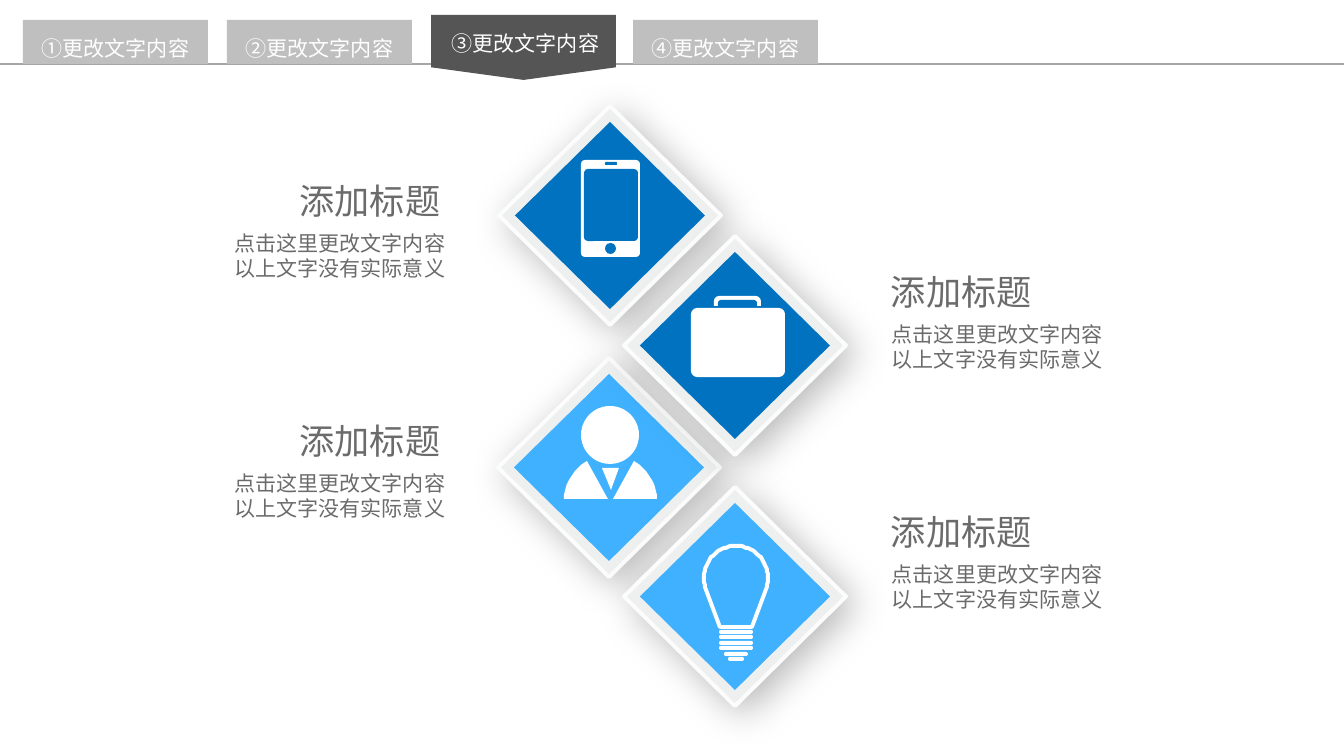
from math import cos, radians, sin

from lxml.etree import SubElement
from pptx import Presentation
from pptx.dml.color import RGBColor
from pptx.enum.shapes import MSO_CONNECTOR, MSO_SHAPE
from pptx.enum.text import MSO_ANCHOR, MSO_AUTO_SIZE, PP_ALIGN
from pptx.oxml.ns import qn
from pptx.util import Pt

PX = 7234
FONT = "Noto Sans CJK SC"
WHITE = RGBColor(0xFF, 0xFF, 0xFF)
DEEP_BLUE = RGBColor(0x00, 0x72, 0xBF)
SKY_BLUE = RGBColor(0x3F, 0xB1, 0xFF)
FRAME = RGBColor(0xEE, 0xF0, 0xF0)
FRAME_EDGE = RGBColor(0xFC, 0xFC, 0xFC)
TEXT_GREY = RGBColor(0x6B, 0x6B, 0x6B)
TAB_GREY = RGBColor(0xBF, 0xBF, 0xBF)
TAB_DARK = RGBColor(0x55, 0x55, 0x55)
RULE_GREY = RGBColor(0xA6, 0xA6, 0xA6)


def paint(shape, fill=None, line=None, width=0):
    shape.shadow.inherit = False
    if fill is None:
        shape.fill.background()
    else:
        shape.fill.solid()
        shape.fill.fore_color.rgb = fill
    if line is None:
        shape.line.fill.background()
    else:
        shape.line.color.rgb = line
        shape.line.width = Pt(width)
        SubElement(shape.line._get_or_add_ln(), qn("a:round"))
    return shape


def add_preset(slide, kind, box, fill, radius=None, **outline):
    shape = slide.shapes.add_shape(kind, *(v * PX for v in box))
    if radius is not None:
        shape.adjustments[0] = radius / min(box[2:])
    return paint(shape, fill, **outline)


def add_outline(slide, origin, points, fill=None, **outline):
    corners = [(origin[0] + x, origin[1] + y) for x, y in points]
    builder = slide.shapes.build_freeform(*corners[0], scale=PX)
    builder.add_line_segments(corners[1:], close=True)
    return paint(builder.convert_to_shape(), fill, **outline)


def write_text(holder, text, size=12, color=TEXT_GREY, align=PP_ALIGN.LEFT,
               leading=14.5, insets=(0, 0), wrap=True):
    frame = holder.text_frame
    frame.text = text
    frame.word_wrap = wrap
    frame.auto_size = MSO_AUTO_SIZE.NONE
    frame.vertical_anchor = MSO_ANCHOR.TOP
    frame.margin_left = frame.margin_right = insets[0] * PX
    frame.margin_top = frame.margin_bottom = insets[1] * PX
    for paragraph in frame.paragraphs:
        paragraph.alignment = align
        paragraph.line_spacing = Pt(leading)
        paragraph.space_before = Pt(0)
        for run in paragraph.runs:
            run.font.size = Pt(size)
            run.font.name = FONT
            run.font.color.rgb = color
            east_asian = SubElement(run.font._element, qn("a:ea"))
            east_asian.set("typeface", FONT)


def add_text(slide, box, text, **style):
    write_text(slide.shapes.add_textbox(*(v * PX for v in box)), text, **style)


def cast_shadow(shape):
    effects = shape._element.spPr.find(qn("a:effectLst"))
    shadow = SubElement(effects, qn("a:outerShdw"), blurRad=str(Pt(22)),
                        dist=str(Pt(6)), dir="2700000", algn="tl", rotWithShape="0")
    black = SubElement(shadow, qn("a:srgbClr"), val="000000")
    SubElement(black, qn("a:alpha"), val="28000")


def add_tabs(slide, box):
    left, top, width, height = box
    tab_width, baseline = 185, top + height
    rule = slide.shapes.add_connector(
        MSO_CONNECTOR.STRAIGHT, 0, baseline * PX, width * PX, baseline * PX)
    rule.line.color.rgb = RULE_GREY
    rule.line.width = Pt(0.75)
    SubElement(rule._element.spPr, qn("a:effectLst"))
    style = dict(color=WHITE, align=PP_ALIGN.CENTER, leading=17.5)
    for x, label in ((23, "①更改文字内容"), (227, "②更改文字内容"), (633, "④更改文字内容")):
        add_preset(slide, MSO_SHAPE.RECTANGLE, (left + x, top, tab_width, height), TAB_GREY)
        add_text(slide, (left + x, top + 10, tab_width, 34), label, **style)

    active_left, active_height = left + 431, 65
    shift = (tab_width - active_height) // 2
    active_tab = add_preset(
        slide, MSO_SHAPE.PENTAGON,
        (active_left + shift, top - 5 - shift, active_height, tab_width), TAB_DARK, radius=12.6)
    active_tab.rotation = 90
    title = slide.shapes.title
    title.left, title.top = (active_left + 2) * PX, (top + 5) * PX
    title.width, title.height = tab_width * PX, 34 * PX
    write_text(title, "③更改文字内容", **style)
    title.element.getparent().append(title.element)


def draw_phone(slide, cx, cy, color):
    for x, y, w, h, radius, fill in ((-29, -55, 59, 97, 4, WHITE),
                                     (-26, -46, 54, 72, 4, color),
                                     (-5, -53, 12, 3, 1, color)):
        add_preset(slide, MSO_SHAPE.ROUNDED_RECTANGLE, (cx + x, cy + y, w, h), fill, radius)
    add_preset(slide, MSO_SHAPE.OVAL, (cx - 5, cy + 28, 11, 11), color)


def draw_briefcase(slide, cx, cy, color):
    handle = MSO_SHAPE.ROUND_2_SAME_RECTANGLE
    add_preset(slide, handle, (cx - 21, cy - 49, 47, 10), WHITE, 5)
    add_preset(slide, handle, (cx - 17, cy - 45, 39, 6), color, 3)
    add_preset(slide, MSO_SHAPE.ROUNDED_RECTANGLE, (cx - 44, cy - 37, 94, 69), WHITE, 6)


def draw_person(slide, cx, cy, color):
    def arm(t):
        weights = ((1 - t) ** 3, 3 * t * (1 - t) ** 2, 3 * t * t * (1 - t), t ** 3)
        controls = ((-22, -6), (-36, 2), (-44, 16), (-45, 32))
        return tuple(sum(w * p[axis] for w, p in zip(weights, controls)) for axis in (0, 1))

    shoulder = [arm(step / 12) for step in range(13)] + [(-1, 32)]
    add_outline(slide, (cx, cy), shoulder, WHITE)
    add_outline(slide, (cx, cy), [(3 - x, y) for x, y in shoulder], WHITE)
    add_preset(slide, MSO_SHAPE.OVAL, (cx - 28, cy - 61, 58, 58), WHITE)
    add_outline(slide, (cx, cy), [(-7, 1), (2, 23), (10, 1)], WHITE)


def draw_bulb(slide, cx, cy, color):
    glass = [(1 + 32 * cos(radians(a)), -18 + 32 * sin(radians(a))) for a in range(164, 377, 4)]
    add_outline(slide, (cx, cy), glass + [(17, 31), (-15, 31)], line=WHITE, width=2.25)
    for row, width in enumerate((34, 34, 34, 34, 24, 16)):
        add_preset(slide, MSO_SHAPE.ROUNDED_RECTANGLE,
                   (cx + 1 - width // 2, cy + round(34 + 5.4 * row), width, 4), WHITE, 2)


def add_diamond(slide, box, color, draw_icon):
    left, top, width, height = box
    frame = add_preset(slide, MSO_SHAPE.DIAMOND, box, FRAME, line=FRAME_EDGE, width=2.25)
    cast_shadow(frame)
    margin = 16
    add_preset(slide, MSO_SHAPE.DIAMOND,
               (left + margin, top + margin, width - 2 * margin, height - 2 * margin), color)
    draw_icon(slide, left + width // 2, top + height // 2, color)


def add_caption(slide, box, heading_indent, align):
    left, top, width, height = box
    add_text(slide, (left + heading_indent, top + 1, 162, 53), "添加标题",
             size=20, leading=24.5, align=align, insets=(10, 5), wrap=False)
    add_text(slide, (left, top + 51, width, height - 51),
             "点击这里更改文字内容\n以上文字没有实际意义", align=align, insets=(12, 6))


def main():
    deck = Presentation()
    deck.slide_width, deck.slide_height = 1344 * PX, 747 * PX
    slide = deck.slides.add_slide(deck.slide_layouts[5])
    for left, top, color, draw_icon in ((499, 106, DEEP_BLUE, draw_phone),
                                        (498, 358, SKY_BLUE, draw_person),
                                        (624, 236, DEEP_BLUE, draw_briefcase),
                                        (624, 487, SKY_BLUE, draw_bulb)):
        add_diamond(slide, (left, top, 222, 219), color, draw_icon)
    for row_top in (173, 413):
        add_caption(slide, (214, row_top, 252, 114), 75, PP_ALIGN.CENTER)
        add_caption(slide, (880, row_top + 91, 252, 114), 1, PP_ALIGN.LEFT)
    add_tabs(slide, (0, 20, 1344, 44))
    deck.save("out.pptx")


if __name__ == "__main__":
    main()
